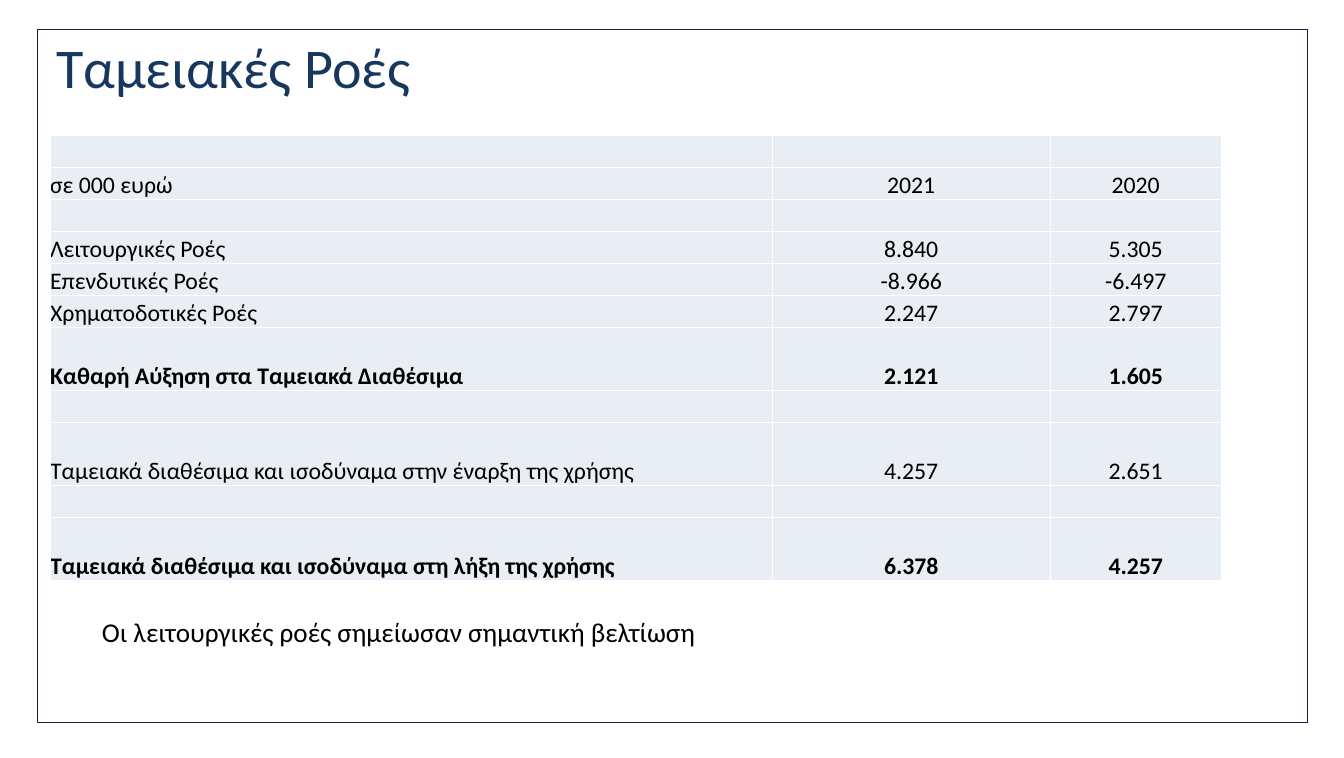
import pptx
import pptx.dml.color
import pptx.enum.shapes
import pptx.enum.text
import pptx.oxml
import pptx.oxml.ns
import pptx.util

Pt = pptx.util.Pt
ALIGN = pptx.enum.text.PP_ALIGN

FONT = "Calibri"
BLACK = "000000"
CELL_FILL = "E9EDF4"
CELL_BORDER = "FFFFFF"
COLUMN_WIDTHS = (851, 327, 202)
ROW_HEIGHT, TALL_ROW_HEIGHT = 37.7, 74.2

# Each row: label, 2021, 2020, tall, bold
EMPTY = ("", "", "", False, False)
CASH_FLOWS = [
    EMPTY,
    ("σε 000 ευρώ", "2021", "2020", False, False),
    EMPTY,
    ("Λειτουργικές Ροές", "8.840", "5.305", False, False),
    ("Επενδυτικές Ροές", "-8.966", "-6.497", False, False),
    ("Χρηματοδοτικές Ροές", "2.247", "2.797", False, False),
    ("Καθαρή Αύξηση στα Ταμειακά Διαθέσιμα", "2.121", "1.605", True, True),
    EMPTY,
    ("Ταμειακά διαθέσιμα και ισοδύναμα στην έναρξη της χρήσης",
     "4.257", "2.651", True, False),
    EMPTY,
    ("Ταμειακά διαθέσιμα και ισοδύναμα στη λήξη της χρήσης",
     "6.378", "4.257", True, True),
]


def rgb(value):
    return pptx.dml.color.RGBColor.from_string(value)


def apply(obj, values):
    for name, value in values.items():
        setattr(obj, name, value)


def add_run(p, text, size, color, bold=False):
    r = p.add_run()
    r.text = text
    apply(r.font, {"name": FONT, "size": Pt(size), "bold": bold})
    r.font.color.rgb = rgb(color)


def add_frame(s, left, top, width, height):
    sp = s.shapes.add_shape(pptx.enum.shapes.MSO_SHAPE.RECTANGLE,
                            Pt(left), Pt(top), Pt(width), Pt(height))
    sp.shadow.inherit = False
    sp.fill.background()
    sp.line.color.rgb = rgb("0F243E")
    sp.line.width = Pt(0.25)


def add_text(s, left, top, width, height, text, size, color):
    sp = s.shapes.add_textbox(Pt(left), Pt(top), Pt(width), Pt(height))
    tf = sp.text_frame
    tf.word_wrap = True
    add_run(tf.paragraphs[0], text, size, color)


def add_borders(cell):
    tc_pr = cell._tc.get_or_add_tcPr()
    for side in ("lnL", "lnR", "lnT", "lnB"):
        tc_pr.append(pptx.oxml.parse_xml(
            f'<a:{side} {pptx.oxml.ns.nsdecls("a")} w="{Pt(1)}"><a:solidFill>'
            f'<a:srgbClr val="{CELL_BORDER}"/></a:solidFill></a:{side}>'))


def fill_cell(cell, text, align, bold):
    apply(cell, {"margin_left": 0, "margin_right": 0,
                 "margin_top": 0, "margin_bottom": 0,
                 "vertical_anchor": pptx.enum.text.MSO_ANCHOR.BOTTOM})
    add_borders(cell)
    cell.fill.solid()
    cell.fill.fore_color.rgb = rgb(CELL_FILL)
    if text:
        p = cell.text_frame.paragraphs[0]
        p.alignment = align
        add_run(p, text, 28, BLACK, bold)


def add_cash_flow_table(s, left, top):
    heights = [TALL_ROW_HEIGHT if row[3] else ROW_HEIGHT for row in CASH_FLOWS]
    table = s.shapes.add_table(
        len(CASH_FLOWS), len(COLUMN_WIDTHS), Pt(left), Pt(top),
        Pt(sum(COLUMN_WIDTHS)), Pt(sum(heights))).table
    apply(table, {"first_row": False, "horz_banding": False})
    for column, width in zip(table.columns, COLUMN_WIDTHS):
        column.width = Pt(width)
    for row, height, (*texts, _, bold) in zip(table.rows, heights, CASH_FLOWS):
        row.height = Pt(height)
        for i, (cell, text) in enumerate(zip(row.cells, texts)):
            fill_cell(cell, text, ALIGN.CENTER if i else ALIGN.LEFT, bold)


def main():
    prs = pptx.Presentation()
    apply(prs, {"slide_width": Pt(1583.3), "slide_height": Pt(892.8)})
    s = prs.slides.add_slide(prs.slide_layouts[6])

    # Frame and title
    add_frame(s, 43.2, 33.8, 1496.2, 816.5)
    add_text(s, 59, 34.6, 791.3, 87.1, "Tαμειακές Ροές", 66, "17375E")

    # Remark below the table
    add_text(s, 113, 721.4, 1033.9, 123.8,
             "Οι λειτουργικές ροές σημείωσαν σημαντική βελτίωση", 32, BLACK)

    # Cash flow table
    add_cash_flow_table(s, 59, 159.8)

    prs.save("out.pptx")


if __name__ == "__main__":
    main()
